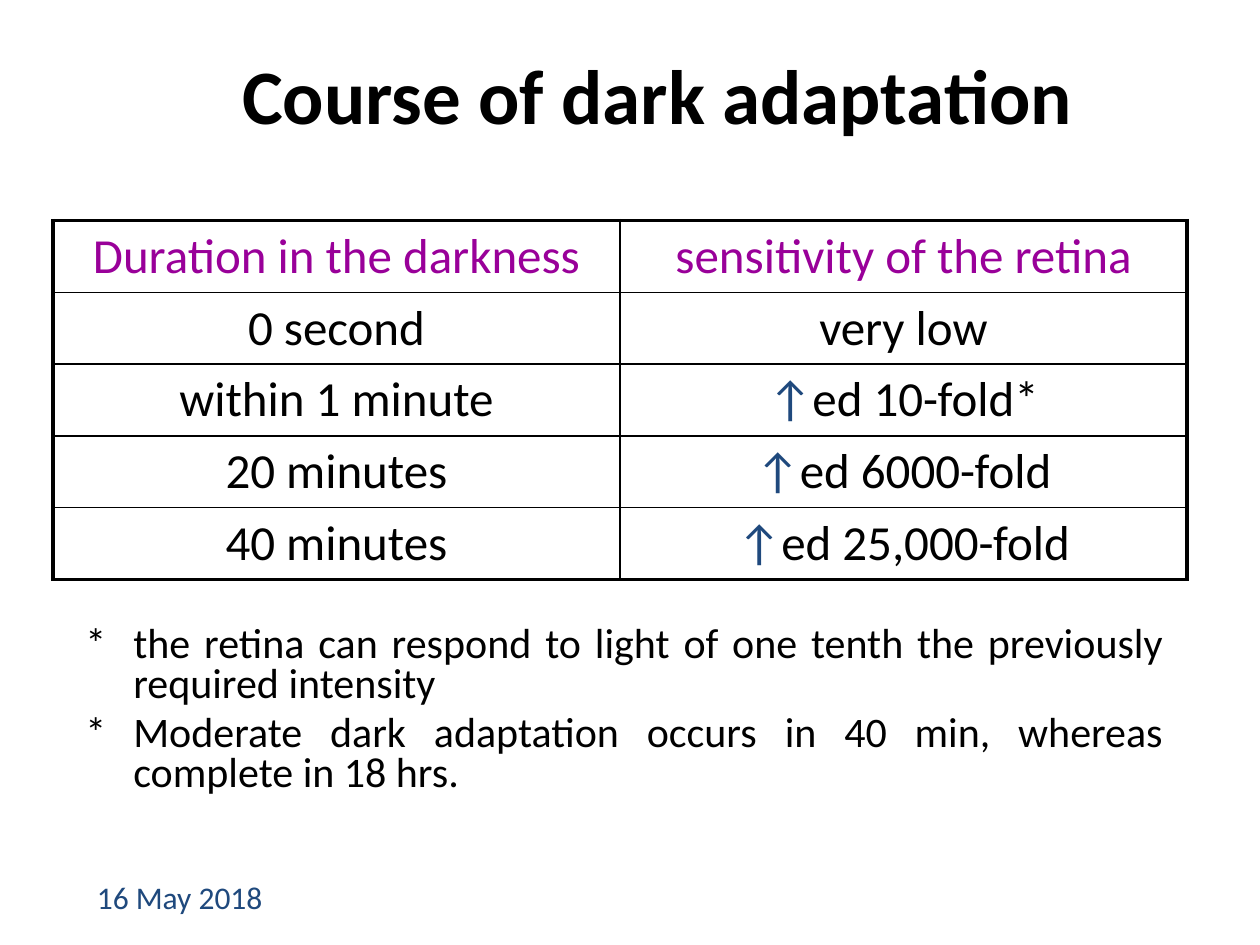
from lxml.etree import SubElement
from pptx import Presentation
from pptx.dml.color import RGBColor
from pptx.enum.text import MSO_ANCHOR as Anchor, PP_ALIGN as Align
from pptx.oxml.ns import qn
from pptx.util import Inches, Pt

COLORS = {"black": "000000", "navy": "1F497D", "purple": "990099"}


def style_runs(paragraph, size, color, bold=False):
    for run in paragraph.runs:
        run.font.name = "Calibri"
        run.font.size = Pt(size)
        run.font.bold = bold
        run.font.color.rgb = RGBColor.from_string(COLORS[color])


def add_border(cell, side, width):
    """Draw one side (L, R, T or B) of a cell in black."""
    line = SubElement(cell._tc.get_or_add_tcPr(), qn(f"a:ln{side}"), w=str(Pt(width)))
    fill = SubElement(line, qn("a:solidFill"))
    SubElement(fill, qn("a:srgbClr"), val=COLORS["black"])


prs = Presentation()
prs.slide_width, prs.slide_height = Inches(10), Inches(7.5)
slide = prs.slides.add_slide(prs.slide_layouts[6])

date = slide.shapes.add_textbox(Inches(0.67), Inches(6.92), Inches(2.08), Inches(0.5)).text_frame
date.word_wrap = True
date.text = "16 May 2018"
style_runs(date.paragraphs[0], 18, "navy")

title = slide.shapes.add_textbox(Inches(1), Inches(0.08), Inches(8.44), Inches(1.33)).text_frame
title.word_wrap = True
title.vertical_anchor = Anchor.MIDDLE
title.text = "Course of dark adaptation"
title.paragraphs[0].alignment = Align.CENTER
style_runs(title.paragraphs[0], 44, "black", bold=True)

adaptation = [
    ("Duration in the darkness", "sensitivity of the retina"),
    ("0 second", "very low"),
    ("within 1 minute", "↑ed 10-fold*"),
    ("20 minutes", "↑ed 6000-fold"),
    ("40 minutes", "↑ed 25,000-fold"),
]
last_row, last_col = len(adaptation) - 1, len(adaptation[0]) - 1
table = slide.shapes.add_table(last_row + 1, last_col + 1, Inches(0.42), Inches(1.75),
                               Inches(9), Inches(2.85)).table
table.first_row = table.horz_banding = False
for r, entries in enumerate(adaptation):
    table.rows[r].height = Inches(0.57)
    for c, entry in enumerate(entries):
        cell = table.cell(r, c)
        outer_sides = {"L": c == 0, "R": c == last_col, "T": r == 0, "B": r == last_row}
        for side, is_outer in outer_sides.items():
            add_border(cell, side, 2.25 if is_outer else 1)
        cell.fill.background()
        paragraph = cell.text_frame.paragraphs[0]
        paragraph.alignment = Align.CENTER
        arrow = "↑" if entry.startswith("↑") else ""
        for part in filter(None, (arrow, entry.removeprefix("↑"))):
            paragraph.add_run().text = part
        style_runs(paragraph, 28, "purple" if r == 0 else "black")
        if arrow:
            paragraph.runs[0].font.color.rgb = RGBColor.from_string(COLORS["navy"])

notes = [
    "*\tthe retina can respond to light of one tenth the previously required intensity",
    "*\tModerate dark adaptation occurs in 40 min, whereas complete in 18 hrs.",
]
footnotes = slide.shapes.add_textbox(Inches(0.58), Inches(4.92), Inches(8.75), Inches(1.54)).text_frame
footnotes.word_wrap = True
footnotes.text = "\n".join(notes)
for paragraph in footnotes.paragraphs:
    paragraph.alignment = Align.JUSTIFY
    paragraph.line_spacing = 0.8
    paragraph.space_before = Pt(4.8)
    properties = paragraph._p.get_or_add_pPr()
    properties.set("marL", str(Inches(0.38)))
    properties.set("indent", str(Inches(-0.38)))
    style_runs(paragraph, 24, "black")

prs.save("out.pptx")
